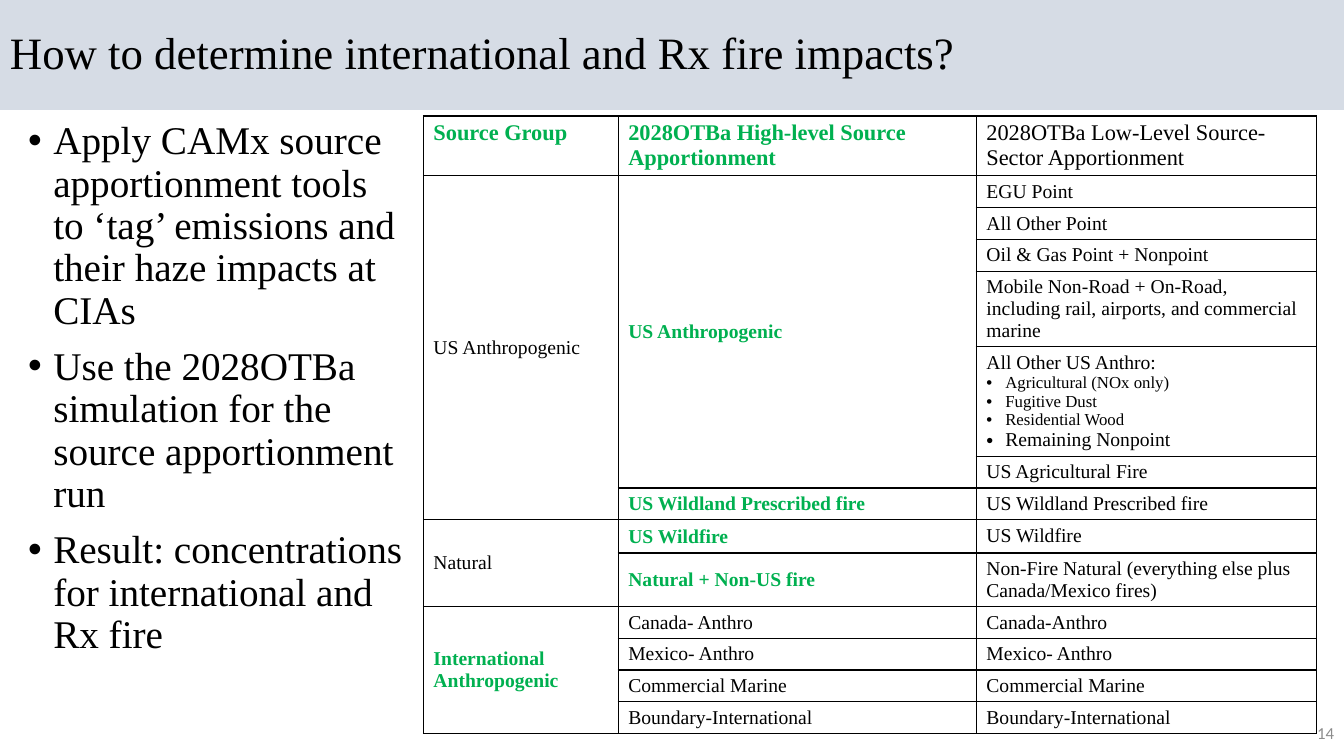
"""Build the slide on international and prescribed fire impacts."""
from lxml import etree
from pptx import Presentation
from pptx import util as u
from pptx.dml import color
from pptx.enum import text
from pptx.oxml import ns

SERIF = "Times New Roman"
BLACK, GREEN, GREY, BAND = "000000", "00B050", "8C8C8C", "D6DCE5"


def write(para, wording, hue=BLACK, bullet_indent=0, **formats):
    if bullet_indent:
        props = para._p.get_or_add_pPr()
        props.set("marL", str(u.Pt(bullet_indent)))
        props.set("indent", str(-u.Pt(bullet_indent)))
        etree.SubElement(props, ns.qn("a:buFont")).set("typeface", "Arial")
        etree.SubElement(props, ns.qn("a:buChar")).set("char", "•")
    span = para.add_run()
    span.text = wording
    for name, value in ({"name": SERIF, "bold": False} | formats).items():
        setattr(span.font, name, value)
    span.font.color.rgb = color.RGBColor.from_string(hue)


def add_box(page, left, top, width, height, anchor):
    box = page.shapes.add_textbox(u.Pt(left), u.Pt(top), u.Pt(width), u.Pt(height))
    frame = box.text_frame
    settings = {"word_wrap": True, "auto_size": text.MSO_AUTO_SIZE.NONE, "vertical_anchor": anchor}
    for name, value in settings.items():
        setattr(frame, name, value)
    return box


deck = Presentation()
deck.slide_width, deck.slide_height = u.Pt(960), u.Pt(540)
page = deck.slides.add_slide(deck.slide_layouts[6])
TOP, MIDDLE = text.MSO_ANCHOR.TOP, text.MSO_ANCHOR.MIDDLE

title = add_box(page, 0, 0, 960, 78.5, MIDDLE)
title.fill.solid()
title.fill.fore_color.rgb = color.RGBColor.from_string(BAND)
heading = title.text_frame.paragraphs[0]
heading.line_spacing = 0.9
write(heading, "How to determine international and Rx fire impacts?", size=u.Pt(32))

points = [
    "Apply CAMx source apportionment tools to ‘tag’ emissions and their haze impacts at CIAs",
    "Use the 2028OTBa simulation for the source apportionment run",
    "Result: concentrations for international and Rx fire",
]
body = add_box(page, 13, 82.8, 283.7, 427, TOP).text_frame
for index, point in enumerate(points):
    para = body.add_paragraph() if index else body.paragraphs[0]
    write(para, point, bullet_indent=18, size=u.Pt(28))
    para.line_spacing = 0.9
    para.space_before = u.Pt(10 if index else 0)

number = add_box(page, 744, 509, 216, 28.8, MIDDLE).text_frame.paragraphs[0]
number.alignment = text.PP_ALIGN.RIGHT
write(number, "14", GREY, name="Calibri", size=u.Pt(12))

rows = [
    ("Source Group", "2028OTBa High-level Source Apportionment",
     "2028OTBa Low-Level Source-Sector Apportionment"),
    ("US Anthropogenic", "US Anthropogenic", "EGU Point"),
    ("", "", "All Other Point"),
    ("", "", "Oil & Gas Point + Nonpoint"),
    ("", "", "Mobile Non-Road + On-Road, including rail, airports, and commercial marine"),
    ("", "", "All Other US Anthro:"),
    ("", "", "US Agricultural Fire"),
    ("", "US Wildland Prescribed fire", "US Wildland Prescribed fire"),
    ("Natural", "US Wildfire", "US Wildfire"),
    ("", "Natural + Non-US fire", "Non-Fire Natural (everything else plus Canada/Mexico fires)"),
    ("International Anthropogenic", "Canada- Anthro", "Canada-Anthro"),
    ("", "Mexico- Anthro", "Mexico- Anthro"),
    ("", "Commercial Marine", "Commercial Marine"),
    ("", "Boundary-International", "Boundary-International"),
]
green_cells = {(0, 0), (0, 1), (1, 1), (7, 1), (8, 1), (9, 1), (10, 0)}
other_sources = [("Agricultural (NOx only)", 12), ("Fugitive Dust", 12),
                 ("Residential Wood", 12), ("Remaining Nonpoint", 14)]
widths = [139.2, 255.8, 242.8]
tall_rows = {0: 42, 4: 54, 5: 77.5, 8: 23.8, 9: 38}
heights = [tall_rows.get(index, 22.5) for index in range(len(rows))]

table = page.shapes.add_table(len(rows), len(widths), u.Pt(302.4), u.Pt(82.8),
                              u.Pt(sum(widths)), u.Pt(sum(heights))).table
table.first_row = table.horz_banding = False
for column, width in zip(table.columns, widths):
    column.width = u.Pt(width)
for row, height in zip(table.rows, heights):
    row.height = u.Pt(height)

for r, row in enumerate(rows):
    for c, wording in enumerate(row):
        cell = table.cell(r, c)
        props = cell._tc.get_or_add_tcPr()
        for side in ("lnL", "lnR", "lnT", "lnB"):
            line = etree.SubElement(props, ns.qn(f"a:{side}"), w=str(u.Pt(1)))
            fill = etree.SubElement(line, ns.qn("a:solidFill"))
            etree.SubElement(fill, ns.qn("a:srgbClr"), val=BLACK)
        cell.fill.background()
        cell.vertical_anchor = MIDDLE if r > 11 or (r and c < 2) else TOP
        size = u.Pt(14 if r else 16)
        if wording:
            green = (r, c) in green_cells
            write(cell.text_frame.paragraphs[0], wording, GREEN if green else BLACK,
                  bold=green, size=size)
        else:
            cell.text_frame.paragraphs[0].font.size = size

for source, size in other_sources:
    write(table.cell(5, 2).text_frame.add_paragraph(), source, bullet_indent=13.5, size=u.Pt(size))

for first, last, c in [(1, 7, 0), (1, 6, 1), (8, 9, 0), (10, 13, 0)]:
    table.cell(first, c).merge(table.cell(last, c))

deck.save("out.pptx")
